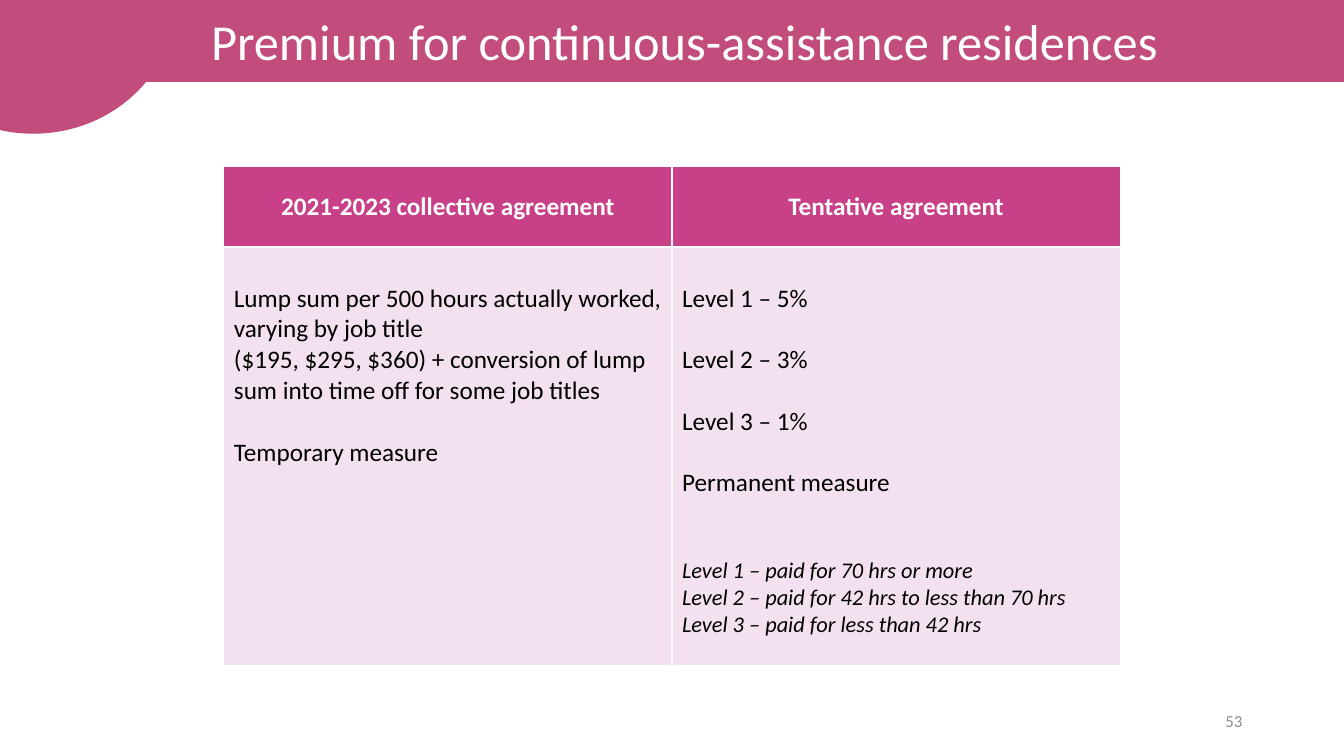
"""Build the slide on the premium for continuous-assistance residences."""
from pptx import Presentation
from pptx import util as u
from pptx.dml.color import RGBColor
from pptx.enum import shapes, text

TITLE = "Premium for continuous-assistance residences"
PAGE = "53"
HEADS = ["2021-2023 collective agreement", "Tentative agreement"]
TERMS = [
    [
        ("Lump sum per 500 hours actually worked, varying by job title", "body", 0),
        ("($195, $295, $360) + conversion of lump sum into time off for some job titles", "body", 0),
        ("Temporary measure", "body", 22),
    ],
    [
        ("Level 1 – 5%", "body", 0),
        ("Level 2 – 3%", "body", 22),
        ("Level 3 – 1%", "body", 22),
        ("Permanent measure", "body", 22),
        ("Level 1 – paid for 70 hrs or more", "note", 41.5),
        ("Level 2 – paid for 42 hrs to less than 70 hrs", "note", 0),
        ("Level 3 – paid for less than 42 hrs", "note", 0),
    ],
]
HEX = {"band": "C24C7B", "head": "C84087", "cell": "F3E1EF",
       "white": "FFFFFF", "black": "000000", "grey": "8C8C8C"}
LEFT, MID, RIGHT = text.PP_ALIGN.LEFT, text.PP_ALIGN.CENTER, text.PP_ALIGN.RIGHT
FORMS = {
    "title": ({"size": u.Pt(36), "bold": False}, "white", MID),
    "head": ({"size": u.Pt(18), "bold": True}, "white", MID),
    "body": ({"size": u.Pt(18), "bold": False}, "black", LEFT),
    "note": ({"size": u.Pt(16), "bold": False, "italic": True}, "black", LEFT),
    "page": ({"size": u.Pt(12), "bold": False}, "grey", RIGHT),
}
ROWS = [0.8, 4.15]
BAND = (0, 0, 13.58, 0.81)
DISC = (-1.08, -1.33, 2.82, 2.65)
GRID = (2.22, 1.65, 8.89, sum(ROWS))
FOOT = (9.42, 6.95, 3, 0.4)


def box(rect):
    return [u.Inches(n) for n in rect]


def color(name):
    return RGBColor.from_string(HEX[name])


def paint(item, name):
    item.fill.solid()
    item.fill.fore_color.rgb = color(name)


def edge(shape):
    paint(shape, "band")
    shape.line.color.rgb = color("band")
    shape.line.width = u.Pt(1)


def write(frame, lines):
    frame.word_wrap = True
    for i, (words, form, gap) in enumerate(lines):
        para = frame.add_paragraph() if i else frame.paragraphs[0]
        font, ink, para.alignment = FORMS[form]
        para.space_before = u.Pt(gap)
        run = para.add_run()
        run.text = words
        for key, val in {"name": "Calibri", **font}.items():
            setattr(run.font, key, val)
        run.font.color.rgb = color(ink)


def add_title(slide):
    title = slide.shapes.title
    title.left, title.top, title.width, title.height = box(BAND)
    edge(title)
    write(title.text_frame, [(TITLE, "title", 0)])
    title.text_frame.auto_size = text.MSO_AUTO_SIZE.NONE
    title.text_frame.vertical_anchor = text.MSO_ANCHOR.MIDDLE
    disc = slide.shapes.add_shape(shapes.MSO_SHAPE.OVAL, *box(DISC))
    disc.shadow.inherit = False
    edge(disc)


def add_grid(slide):
    table = slide.shapes.add_table(2, len(HEADS), *box(GRID)).table
    for row, tall in zip(table.rows, ROWS):
        row.height = u.Inches(tall)
    for col, (head, terms) in enumerate(zip(HEADS, TERMS)):
        top, low = table.cell(0, col), table.cell(1, col)
        paint(top, "head")
        paint(low, "cell")
        top.vertical_anchor = text.MSO_ANCHOR.MIDDLE
        low.margin_top = u.Inches(0.36)
        write(top.text_frame, [(head, "head", 0)])
        write(low.text_frame, terms)


def add_page(slide):
    frame = slide.shapes.add_textbox(*box(FOOT)).text_frame
    frame.vertical_anchor = text.MSO_ANCHOR.MIDDLE
    write(frame, [(PAGE, "page", 0)])


def main():
    deck = Presentation()
    deck.slide_width, deck.slide_height = box((13.33, 7.5))
    slide = deck.slides.add_slide(deck.slide_layouts[5])
    add_title(slide)
    add_page(slide)
    add_grid(slide)
    deck.save("out.pptx")


if __name__ == "__main__":
    main()
